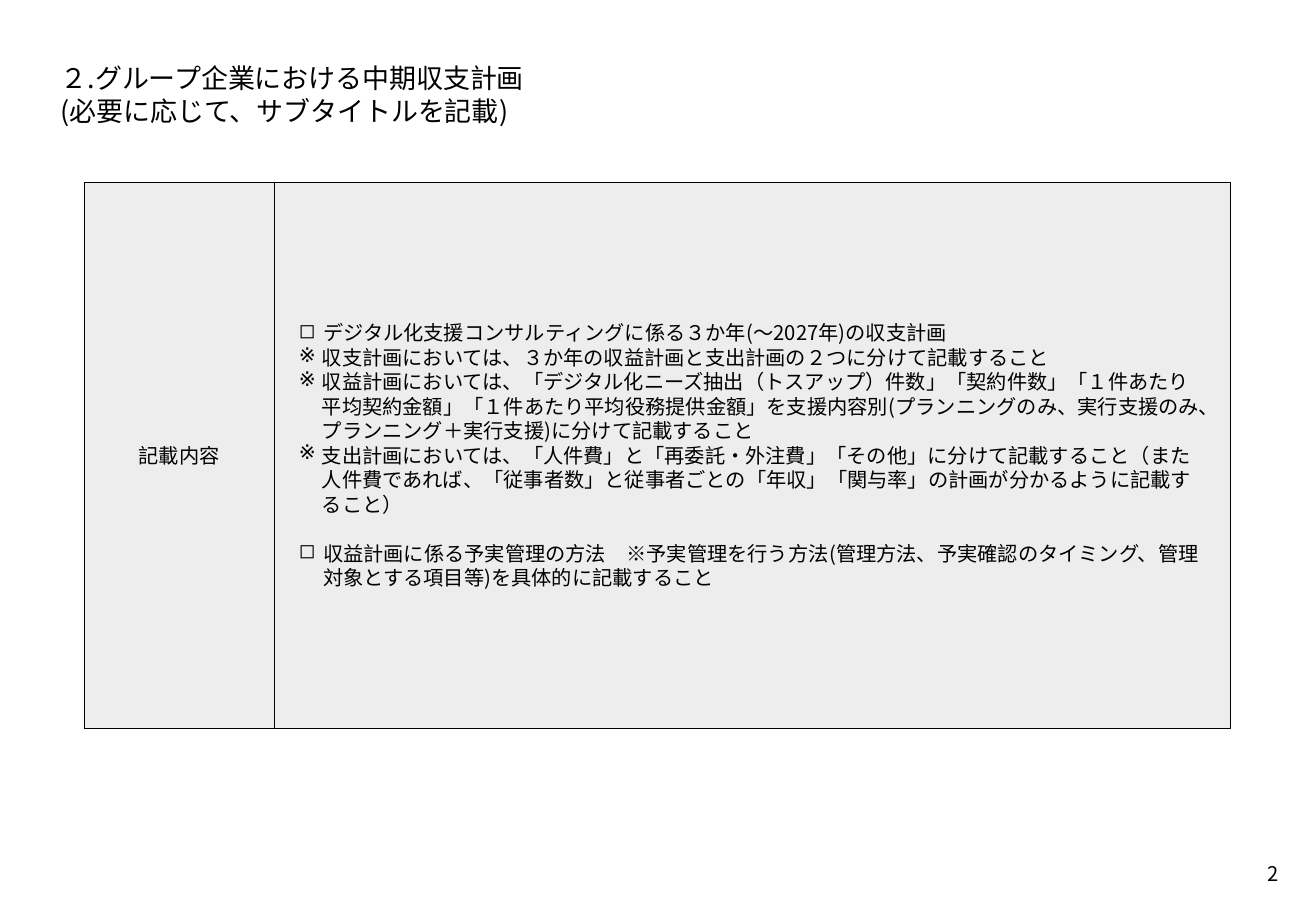
from dataclasses import dataclass

from lxml import etree
from pptx import Presentation
from pptx import util as u
from pptx.dml.color import RGBColor
from pptx.enum import dml, shapes, text
from pptx.oxml.ns import qn

FONT = "Noto Sans CJK JP"
BLACK = RGBColor(0x00, 0x00, 0x00)
GRAY = RGBColor(0xED, 0xED, 0xED)
LEFT, MID, RIGHT = text.PP_ALIGN.LEFT, text.PP_ALIGN.CENTER, text.PP_ALIGN.RIGHT
TOP, BODY = 108, 323.5


@dataclass
class Para:
    lines: list[str]
    size: float = 12
    lead: float = 14.5
    align: text.PP_ALIGN = LEFT
    mark: str = ""
    indent: float = 0
    gap: float = 0


@dataclass
class Panel:
    left: float
    width: float
    inset: float
    paras: list[Para]


def box_item(line: str, gap: float = 0) -> Para:
    return Para([line], mark="◻", indent=14.4, gap=gap)


def note(line: str) -> Para:
    return Para([line], mark="※", indent=13.7)


PANELS = [
    Panel(162.7, 566.7, 14.4, [
        box_item("デジタル化支援コンサルティングに係る３か年(～2027年)の収支計画"),
        note("収支計画においては、３か年の収益計画と支出計画の２つに分けて記載すること"),
        note("収益計画においては、「デジタル化ニーズ抽出（トスアップ）件数」「契約件数」"
             "「１件あたり平均契約金額」「１件あたり平均役務提供金額」を支援内容別"
             "(プランニングのみ、実行支援のみ、プランニング＋実行支援)に分けて記載すること"),
        note("支出計画においては、「人件費」と「再委託・外注費」「その他」に分けて記載すること"
             "（また人件費であれば、「従事者数」と従事者ごとの「年収」「関与率」の計画が"
             "分かるように記載すること）"),
        box_item("収益計画に係る予実管理の方法　※予実管理を行う方法"
                 "(管理方法、予実確認のタイミング、管理対象とする項目等)を具体的に記載すること",
                 gap=14.5),
    ]),
    Panel(49.7, 113, 7.2, [Para(["記載内容"], align=MID)]),
]


def write(frame, paras: list[Para], inset: float,
          anchor: text.MSO_ANCHOR, wrap: bool = True) -> None:
    frame.word_wrap = wrap
    frame.auto_size = text.MSO_AUTO_SIZE.NONE
    frame.vertical_anchor = anchor
    frame.margin_left = frame.margin_right = u.Pt(inset)
    frame.margin_top = frame.margin_bottom = u.Pt(inset)
    for i, para in enumerate(paras):
        p = frame.paragraphs[0] if i == 0 else frame.add_paragraph()
        p.alignment = para.align
        p.line_spacing = u.Pt(para.lead)
        p.space_before = u.Pt(para.gap)
        if para.mark:
            props = p._p.get_or_add_pPr()
            props.set("marL", str(u.Pt(para.indent)))
            props.set("indent", str(-u.Pt(para.indent)))
            etree.SubElement(props, qn("a:buChar")).set("char", para.mark)
        for j, line in enumerate(para.lines):
            if j:
                p.add_line_break()
            run = p.add_run()
            run.text = line
            font = run.font
            font.name, font.size = FONT, u.Pt(para.size)
            font.color.rgb = BLACK
            east = etree.SubElement(font._element, qn("a:ea"))
            east.set("typeface", FONT)


def draw(group, panel: Panel) -> None:
    rect = group.shapes.add_shape(
        shapes.MSO_SHAPE.RECTANGLE, u.Pt(panel.left), u.Pt(TOP),
        u.Pt(panel.width), u.Pt(BODY))
    rect.shadow.inherit = False
    rect.fill.solid()
    rect.fill.fore_color.rgb = GRAY
    rect.line.color.rgb = BLACK
    rect.line.width = u.Pt(0.25)
    rect.line.dash_style = dml.MSO_LINE.ROUND_DOT
    write(rect.text_frame, panel.paras, panel.inset, text.MSO_ANCHOR.MIDDLE)


def main() -> None:
    deck = Presentation()
    deck.slide_width, deck.slide_height = u.Pt(780), u.Pt(540)
    slide = deck.slides.add_slide(deck.slide_layouts[5])

    title = slide.shapes.title
    title.left, title.top = u.Pt(21.6), u.Pt(21.6)
    title.width, title.height = u.Pt(737.3), u.Pt(56.9)
    head = ["２.グループ企業における中期収支計画", "(必要に応じて、サブタイトルを記載)"]
    write(title.text_frame, [Para(head, 16, 19.5)], 14.4, text.MSO_ANCHOR.TOP)

    page = slide.shapes.add_textbox(u.Pt(737.3), u.Pt(503.3), u.Pt(28), u.Pt(28))
    write(page.text_frame, [Para(["2"], align=RIGHT)], 7.2,
          text.MSO_ANCHOR.TOP, wrap=False)

    group = slide.shapes.add_group_shape()
    for panel in PANELS:
        draw(group, panel)
    deck.save("out.pptx")


if __name__ == "__main__":
    main()
